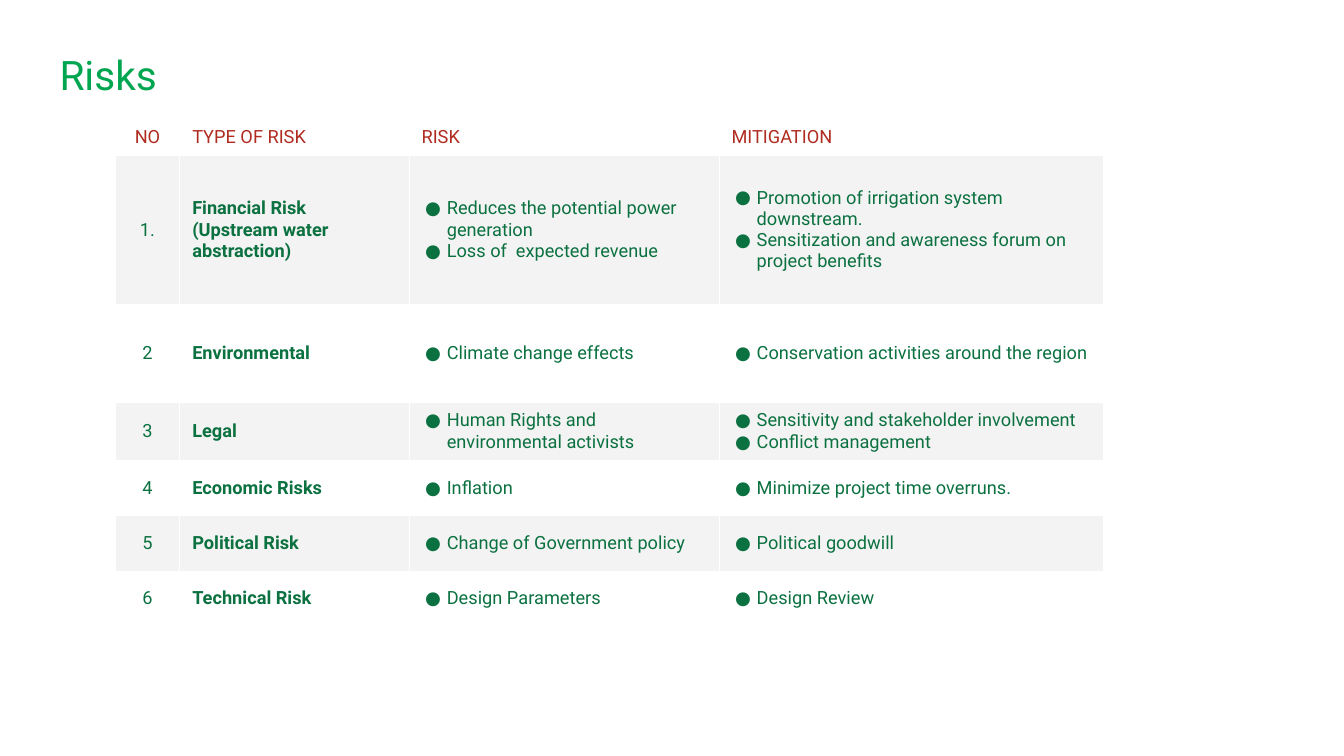
from lxml import etree
from pptx import Presentation
from pptx.dml.color import RGBColor
from pptx.enum.text import MSO_ANCHOR, MSO_AUTO_SIZE, PP_ALIGN
from pptx.oxml.ns import qn
from pptx.util import Cm, Pt

MIDDLE = MSO_ANCHOR.MIDDLE
NO_AUTOFIT = MSO_AUTO_SIZE.NONE
LEFT, CENTER = PP_ALIGN.LEFT, PP_ALIGN.CENTER

FONT = "Roboto"
TITLE_GREEN, TEXT_GREEN, HEADER_RED = "00A54F", "0B7140", "B02C20"
WHITE, BAND_GREY = "FFFFFF", "F3F3F3"

COLUMN_WIDTHS = [3.23, 11.56, 15.62, 19.38]
ROW_HEIGHTS = [1.8, 7.52, 4.95, 2.9, 2.79, 2.79, 2.79]
HEADERS = ["NO", "TYPE OF RISK", "RISK", "MITIGATION"]
RISKS = [
    ("1.", "Financial Risk (Upstream water abstraction)",
     ["Reduces the potential power generation", "Loss of  expected revenue"],
     ["Promotion of irrigation system downstream.",
      "Sensitization and awareness forum on project benefits"]),
    ("2", "Environmental", ["Climate change effects"],
     ["Conservation activities around the region"]),
    ("3", "Legal", ["Human Rights and environmental activists"],
     ["Sensitivity and stakeholder involvement", "Conflict management"]),
    ("4", "Economic Risks", ["Inflation"], ["Minimize project time overruns."]),
    ("5", "Political Risk", ["Change of Government policy"], ["Political goodwill"]),
    ("6", "Technical Risk", ["Design Parameters"], ["Design Review"]),
]


def rgb(color):
    """Return the colour for a hex string."""
    return RGBColor.from_string(color)


def style_text(paragraph, size, color, bold=False):
    """Format every run of a paragraph."""
    for run in paragraph.runs:
        run.font.name = FONT
        run.font.size = Pt(size)
        run.font.bold = bold
        run.font.color.rgb = rgb(color)


def add_bullet(paragraph):
    """Give a paragraph a round bullet with a hanging indent."""
    properties = paragraph._p.get_or_add_pPr()
    properties.set("marL", str(Cm(1.27)))
    properties.set("indent", str(-Cm(1.09)))
    bullet_color = etree.SubElement(properties, qn("a:buClr"))
    etree.SubElement(bullet_color, qn("a:srgbClr"), val=TEXT_GREEN)
    etree.SubElement(properties, qn("a:buFont"), typeface=FONT)
    etree.SubElement(properties, qn("a:buChar"), char="●")


def add_borders(cell, bottom_width):
    """Draw white lines around a cell."""
    properties = cell._tc.get_or_add_tcPr()
    for side, width in (("L", 1), ("R", 1), ("T", 1), ("B", bottom_width)):
        border = etree.SubElement(properties, qn(f"a:ln{side}"), w=str(Pt(width)))
        line_fill = etree.SubElement(border, qn("a:solidFill"))
        etree.SubElement(line_fill, qn("a:srgbClr"), val=WHITE)


def fill_cell(cell, content, fill, color, align=LEFT, bold=False, bottom_width=1):
    """Write a string, or a list as bullets, into a formatted cell."""
    bulleted = isinstance(content, list)
    cell.text_frame.text = "\n".join(content) if bulleted else content
    cell.vertical_anchor = MIDDLE
    cell.margin_left = cell.margin_right = Cm(0.64)
    cell.margin_top = cell.margin_bottom = Cm(0.25)
    for paragraph in cell.text_frame.paragraphs:
        if bulleted:
            add_bullet(paragraph)
        paragraph.alignment = align
        style_text(paragraph, 26, color, bold)
    add_borders(cell, bottom_width)
    cell.fill.solid()
    cell.fill.fore_color.rgb = rgb(fill)


def add_title(slide, text):
    """Place and format the slide title."""
    title = slide.shapes.title
    title.left, title.top, title.width, title.height = Cm(2.31), Cm(1.6), Cm(63.12), Cm(4.24)
    frame = title.text_frame
    frame.text = text
    frame.auto_size = NO_AUTOFIT
    frame.vertical_anchor = MIDDLE
    frame.margin_left = frame.margin_right = Cm(0.69)
    frame.margin_top = frame.margin_bottom = Cm(0.69)
    frame.paragraphs[0].alignment = LEFT
    style_text(frame.paragraphs[0], 58, TITLE_GREEN)


def add_risk_table(slide):
    """Build the table of risks and mitigations."""
    table = slide.shapes.add_table(
        len(ROW_HEIGHTS), len(COLUMN_WIDTHS), Cm(5.82), Cm(6.02),
        Cm(sum(COLUMN_WIDTHS)), Cm(sum(ROW_HEIGHTS))).table
    for column, width in zip(table.columns, COLUMN_WIDTHS):
        column.width = Cm(width)
    for row, height in zip(table.rows, ROW_HEIGHTS):
        row.height = Cm(height)
    for column, header in enumerate(HEADERS):
        fill_cell(table.cell(0, column), header, WHITE, HEADER_RED,
                  align=LEFT if column else CENTER, bottom_width=3)
    for row, risk in enumerate(RISKS, start=1):
        band = BAND_GREY if row % 2 else WHITE
        for column, content in enumerate(risk):
            fill_cell(table.cell(row, column), content, band, TEXT_GREEN,
                      align=LEFT if column else CENTER, bold=column == 1)


def main():
    """Create the presentation with the risk slide."""
    presentation = Presentation()
    presentation.slide_width = Cm(67.74)
    presentation.slide_height = Cm(38.1)
    slide = presentation.slides.add_slide(presentation.slide_layouts[5])
    add_title(slide, "Risks")
    add_risk_table(slide)
    presentation.save("out.pptx")


if __name__ == "__main__":
    main()
